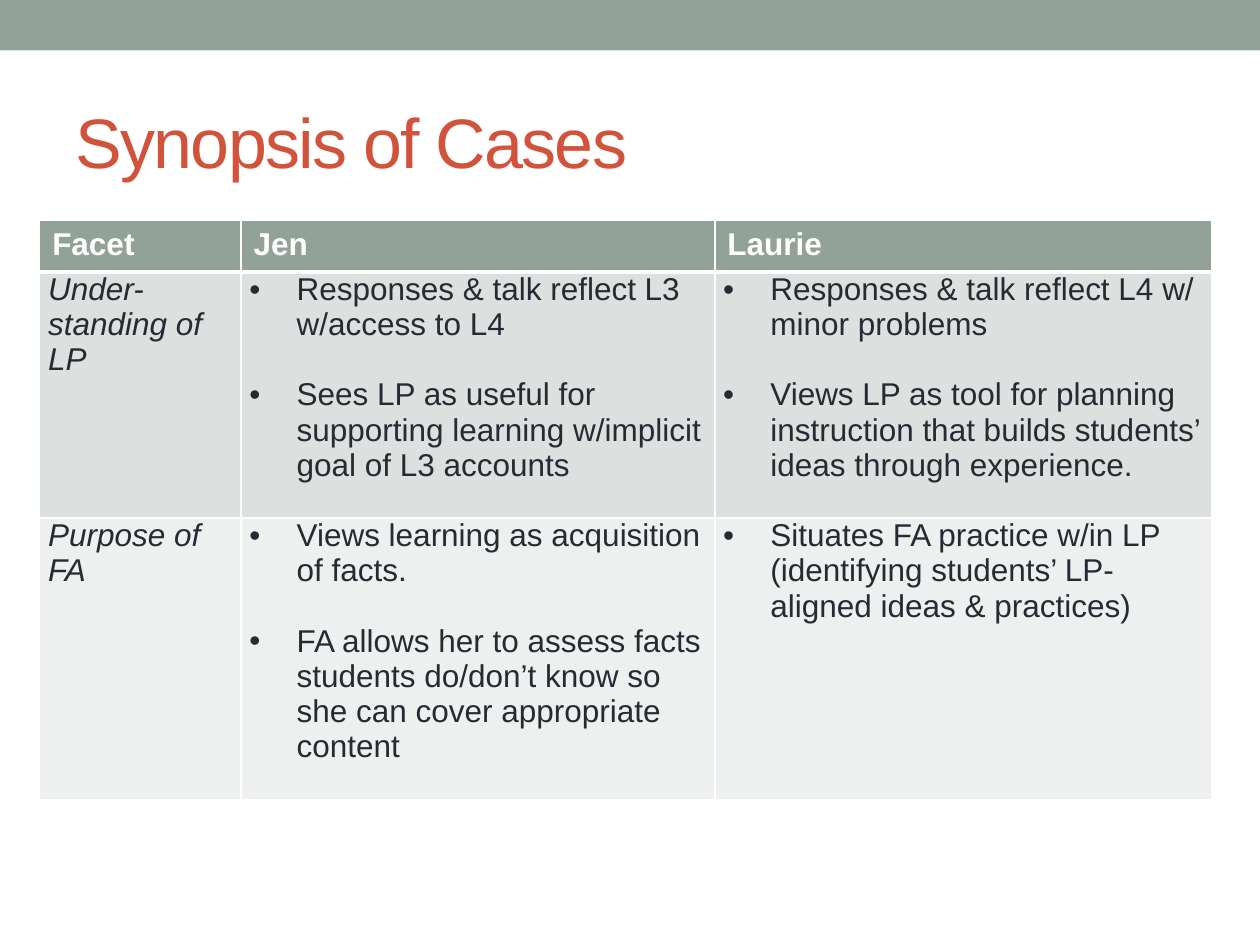
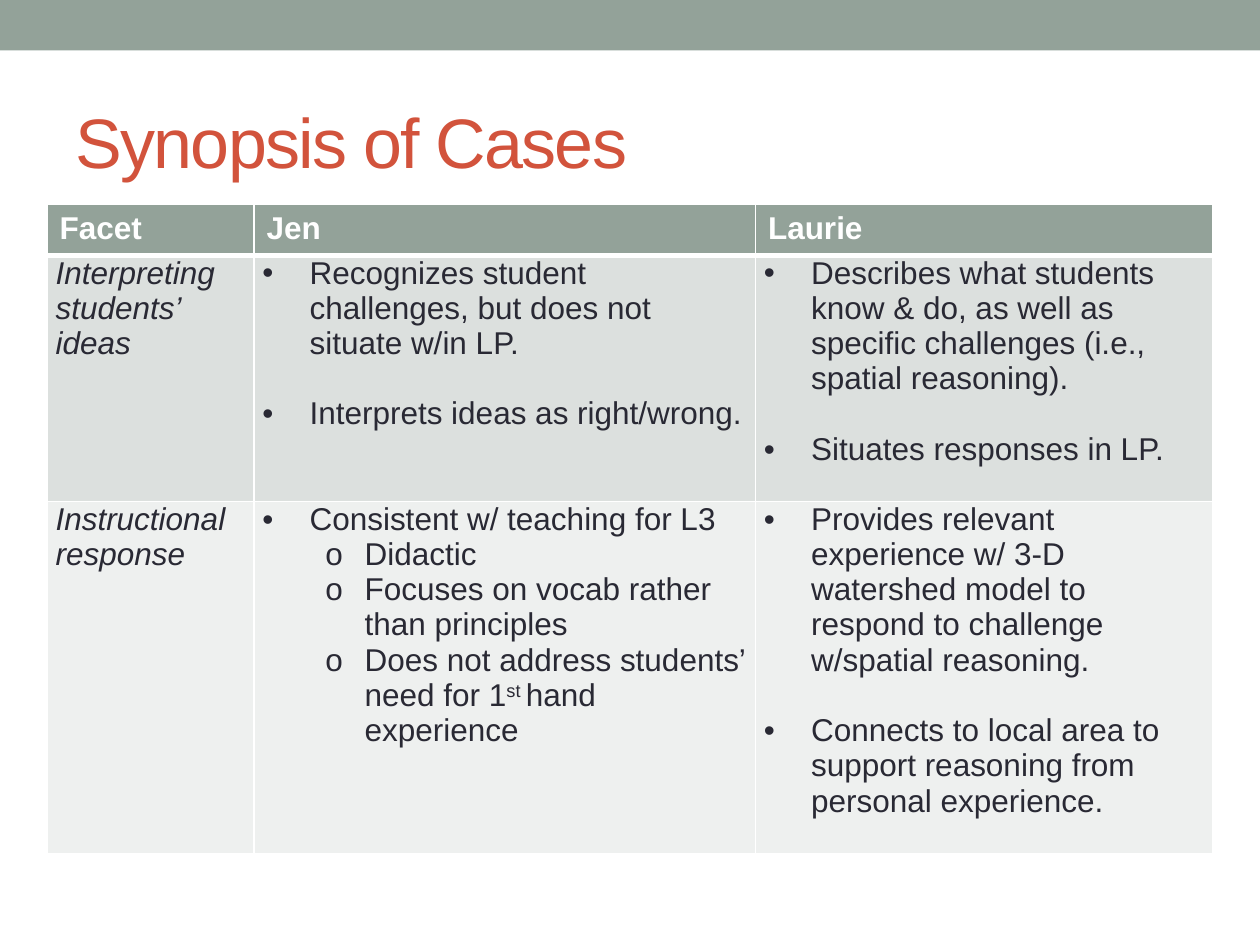
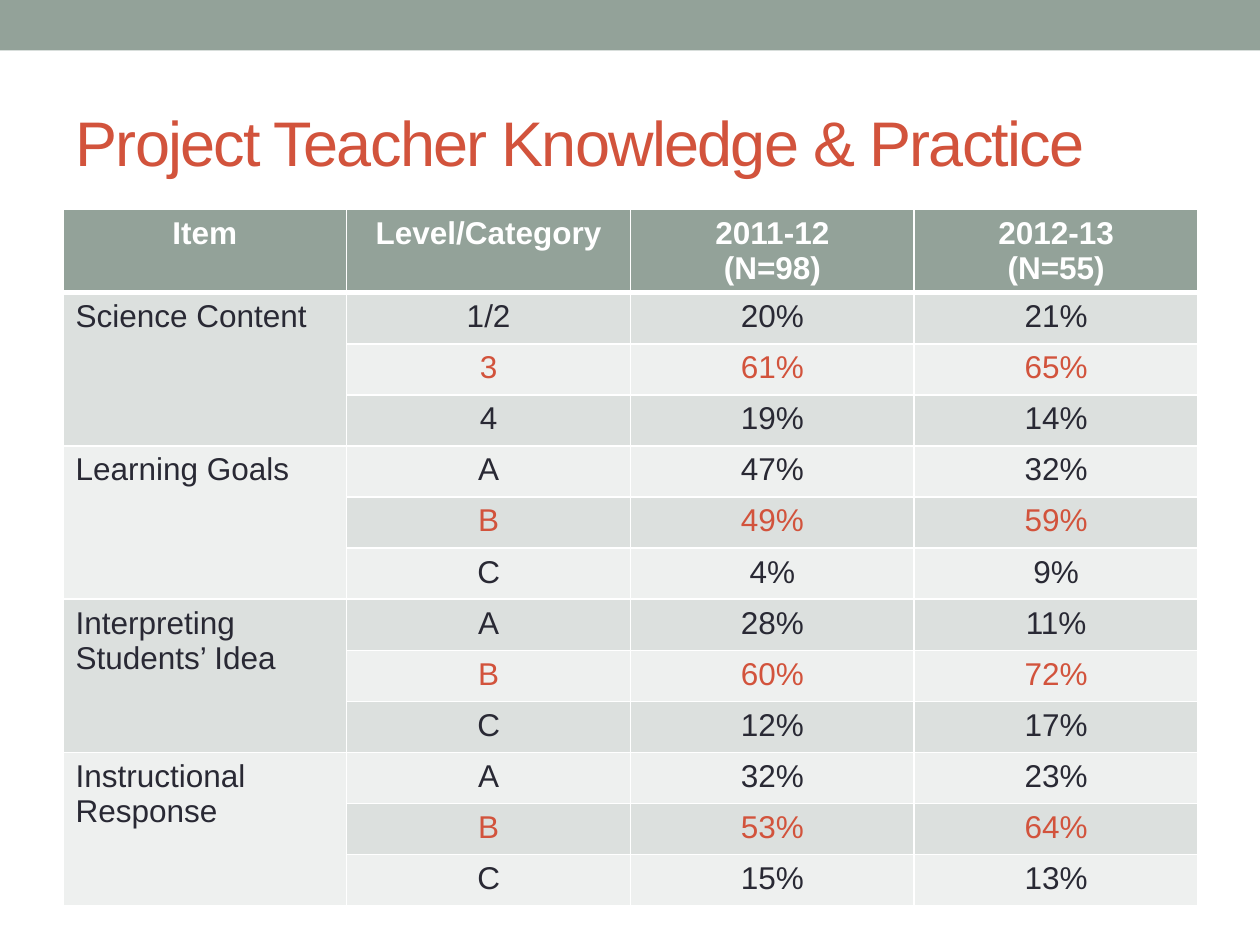
from lxml import etree
from pptx import Presentation
from pptx.dml.color import RGBColor
from pptx.enum.shapes import MSO_SHAPE
from pptx.enum.text import MSO_ANCHOR, MSO_AUTO_SIZE, PP_ALIGN
from pptx.oxml.ns import qn
from pptx.util import Cm, Pt

SAGE = RGBColor(0x93, 0xA2, 0x99)
RUST = RGBColor(0xD2, 0x53, 0x3C)
INK = RGBColor(0x29, 0x29, 0x34)
WHITE = RGBColor(0xFF, 0xFF, 0xFF)
DARK_ROW = RGBColor(0xDC, 0xE0, 0xDE)
LIGHT_ROW = RGBColor(0xEE, 0xF0, 0xEF)
FONT = "Arial"

# Title, title size, table left and top, column widths, row heights
PAGES = [
    ("Synopsis of Cases", 40, 0.8, 4.45, [4.06, 9.55, 10.01], [1.03, 4.96, 5.68]),
    ("Synopsis of Cases", 40, 0.95, 4.12, [4.17, 10.11, 9.22], [1.03, 4.96, 7.1]),
    ("Project Teacher Knowledge & Practice", 36, 1.27, 4.22, [5.72] * 4, [1.68] + [1.03] * 12),
]

# Facet, then bullets for each teacher as (level, text); ^ encloses a superscript
SYNOPSES = [
    [
        ("Under-standing of LP",
         [(0, "Responses & talk reflect L3 w/access to L4"),
          (0, "Sees LP as useful for supporting learning w/implicit goal of L3 accounts")],
         [(0, "Responses & talk reflect L4 w/ minor problems"),
          (0, "Views LP as tool for planning instruction that builds students’ ideas "
              "through experience.")]),
        ("Purpose of FA",
         [(0, "Views learning as acquisition of facts."),
          (0, "FA allows her to assess facts students do/don’t know so she can cover "
              "appropriate content")],
         [(0, "Situates FA practice w/in LP (identifying students’ LP-aligned ideas "
              "& practices)")]),
    ],
    [
        ("Interpreting students’ ideas",
         [(0, "Recognizes student challenges, but does not situate w/in LP."),
          (0, "Interprets ideas as right/wrong.")],
         [(0, "Describes what students know & do, as well as specific challenges "
              "(i.e., spatial reasoning)."),
          (0, "Situates responses in LP.")]),
        ("Instructional response",
         [(0, "Consistent w/ teaching for L3"),
          (1, "Didactic"),
          (1, "Focuses on vocab rather than principles"),
          (1, "Does not address students’ need for 1^st ^hand experience")],
         [(0, "Provides relevant experience w/ 3-D watershed model to respond to "
              "challenge w/spatial reasoning."),
          (0, "Connects to local area to support reasoning from personal experience.")]),
    ],
]
BULLETS = [("•", Cm(0.95), Cm(0.95)), ("o", Cm(2.06), Cm(0.79))]  # sign, margin, hanging

RESULT_HEADS = [["Item"], ["Level/Category"], ["2011-12", "(N=98)"], ["2012-13", "(N=55)"]]
RESULTS = [
    ("Science Content", [("1/2", "20%", "21%"), ("3", "61%", "65%"), ("4", "19%", "14%")]),
    ("Learning Goals", [("A", "47%", "32%"), ("B", "49%", "59%"), ("C", "4%", "9%")]),
    ("Interpreting Students’ Idea", [("A", "28%", "11%"), ("B", "60%", "72%"), ("C", "12%", "17%")]),
    ("Instructional Response", [("A", "32%", "23%"), ("B", "53%", "64%"), ("C", "15%", "13%")]),
]


def add_span(para, text, color=INK, size=18, bold=False, italic=False):
    span = para.add_run()
    span.text = text
    font = span.font
    font.name, font.size, font.bold, font.italic = FONT, Pt(size), bold, italic
    font.color.rgb = color
    return span


def add_borders(cell, top, bottom):
    """Draw white cell borders; top and bottom are widths in points."""
    props = cell._tc.get_or_add_tcPr()
    for side, width in (("L", 1), ("R", 1), ("T", top), ("B", bottom)):
        line = etree.SubElement(props, qn(f"a:ln{side}"), w=str(Pt(width)))
        fill = etree.SubElement(line, qn("a:solidFill"))
        etree.SubElement(fill, qn("a:srgbClr"), val=str(WHITE))


deck = Presentation()
deck.slide_width, deck.slide_height = Cm(25.4), Cm(19.05)
layout = deck.slide_layouts[5]

# Pages with titles and empty, styled tables
tables = []
for title_text, title_size, left, top, widths, heights in PAGES:
    page = deck.slides.add_slide(layout)
    title = page.shapes.title
    title.left, title.top, title.width, title.height = Cm(1.27), Cm(1.47), Cm(22.86), Cm(2.74)
    frame = title.text_frame
    frame.auto_size = MSO_AUTO_SIZE.NONE
    frame.vertical_anchor = MSO_ANCHOR.MIDDLE
    para = frame.paragraphs[0]
    para.alignment = PP_ALIGN.LEFT
    span = add_span(para, title_text, RUST, title_size)
    span.font._element.set("spc", "-100")

    table = page.shapes.add_table(len(heights), len(widths), Cm(left), Cm(top),
                                  Cm(sum(widths)), Cm(sum(heights))).table
    table.horz_banding = False
    for column, width in zip(table.columns, widths):
        column.width = Cm(width)
    for index, height in enumerate(heights):
        table.rows[index].height = Cm(height)
        for cell in table.rows[index].cells:
            add_borders(cell, top=3 if index == 1 else 1, bottom=3 if index == 0 else 1)
            cell.fill.solid()
            cell.fill.fore_color.rgb = SAGE if index == 0 else (LIGHT_ROW, DARK_ROW)[index % 2]
    tables.append(table)

# Top band, moved to the master so that every page shows it
band = page.shapes.add_shape(MSO_SHAPE.RECTANGLE, 0, 0, deck.slide_width, Cm(1.02))
band.shadow.inherit = False
band.fill.solid()
band.fill.fore_color.rgb = SAGE
band.line.fill.background()
deck.slide_master.element.cSld.spTree.insert(2, band.element)

# Synopsis tables
for table, facets in zip(tables, SYNOPSES):
    for column, head in enumerate(("Facet", "Jen", "Laurie")):
        add_span(table.cell(0, column).text_frame.paragraphs[0], head, WHITE, bold=True)
    for row, (facet, *teachers) in enumerate(facets, start=1):
        for cell in table.rows[row].cells:
            cell.margin_left = cell.margin_right = Cm(0.17)
            cell.margin_top = cell.margin_bottom = 0
        add_span(table.cell(row, 0).text_frame.paragraphs[0], facet, italic=True)
        for column, points in enumerate(teachers, start=1):
            frame = table.cell(row, column).text_frame
            for number, (level, text) in enumerate(points):
                para = frame.add_paragraph() if number else frame.paragraphs[0]
                para.level = level
                if number and level == 0:
                    para.space_before = Pt(20)
                sign, margin, hanging = BULLETS[level]
                props = para._p.get_or_add_pPr()
                props.set("marL", str(margin))
                props.set("indent", str(-hanging))
                etree.SubElement(props, qn("a:buFont"), typeface=FONT)
                etree.SubElement(props, qn("a:buChar"), char=sign)
                for part, piece in enumerate(text.split("^")):
                    span = add_span(para, piece)
                    if part % 2:
                        span.font._element.set("baseline", "30000")

# Results table
table = tables[-1]
for column, lines in enumerate(RESULT_HEADS):
    frame = table.cell(0, column).text_frame
    for number, line in enumerate(lines):
        para = frame.add_paragraph() if number else frame.paragraphs[0]
        para.alignment = PP_ALIGN.CENTER
        add_span(para, line, WHITE, bold=True)
for group, (item, levels) in enumerate(RESULTS):
    first_row = 1 + group * len(levels)
    item_cell = table.cell(first_row, 0)
    item_cell.merge(table.cell(first_row + len(levels) - 1, 0))
    add_span(item_cell.text_frame.paragraphs[0], item)
    for offset, values in enumerate(levels):
        color = RUST if offset == 1 else INK
        for column, value in enumerate(values, start=1):
            para = table.cell(first_row + offset, column).text_frame.paragraphs[0]
            para.alignment = PP_ALIGN.CENTER
            add_span(para, value, color)

deck.save("out.pptx")
